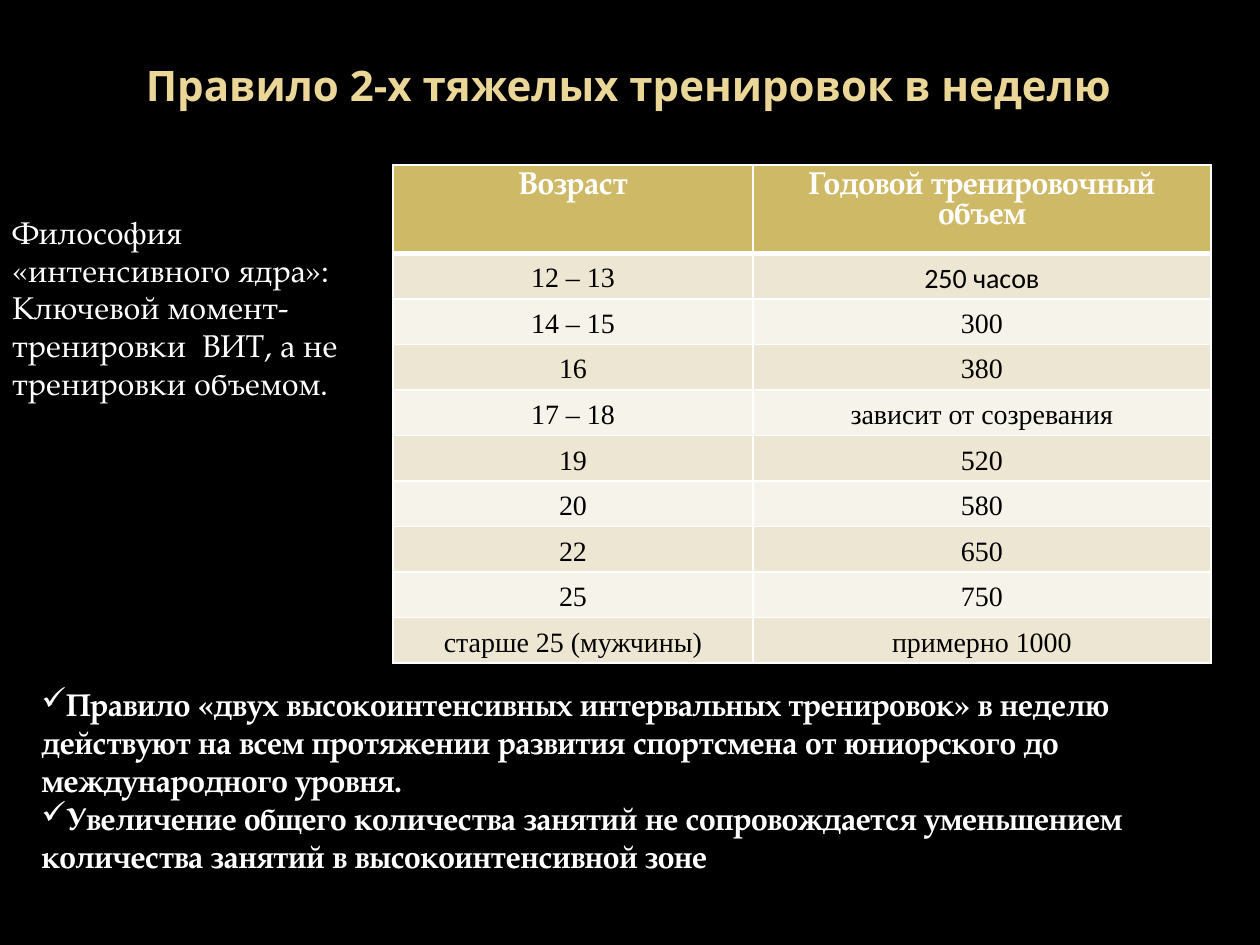
from dataclasses import dataclass

from lxml.etree import SubElement
from pptx import Presentation
from pptx.dml.color import RGBColor as RGB
from pptx.enum.text import MSO_ANCHOR as Anchor, PP_ALIGN as Align
from pptx.oxml.ns import qn
from pptx.util import Inches, Pt


@dataclass(frozen=True)
class Theme:
    background: RGB = RGB.from_string("000000")
    light: RGB = RGB.from_string("FFFFFF")
    dark: RGB = RGB.from_string("000000")
    title_start: RGB = RGB.from_string("EAD696")
    title_end: RGB = RGB.from_string("E7D081")
    header: RGB = RGB.from_string("CEB966")
    bands: tuple = (RGB.from_string("EDE6D3"), RGB.from_string("F6F3EA"))
    title_font: str = "Noto Sans"
    body_font: str = "TeX Gyre Pagella"
    cell_font: str = "Times New Roman"
    hours_font: str = "Calibri"
    title_size: int = 24
    body_size: int = 18
    cell_size: int = 16


THEME = Theme()
COLUMNS, ROWS = 100, 75
UNIT = Inches(10) // COLUMNS

TITLE = "Правило 2-х тяжелых тренировок в неделю "
PHILOSOPHY = [
    "Философия «интенсивного ядра»:",
    "Ключевой момент- тренировки  ВИТ, а не",
    "тренировки объемом.",
]
RULES = [
    "Правило «двух высокоинтенсивных интервальных тренировок» в неделю "
    "действуют на всем протяжении развития спортсмена от юниорского до "
    "международного уровня.",
    "Увеличение общего количества занятий не сопровождается уменьшением "
    "количества занятий в высокоинтенсивной зоне",
]
VOLUMES = [
    ("Возраст", "Годовой тренировочный объем"),
    ("12 – 13", "250 часов"),
    ("14 – 15", "300"),
    ("16", "380"),
    ("17 – 18", "зависит от созревания"),
    ("19", "520"),
    ("20", "580"),
    ("22", "650"),
    ("25", "750"),
    ("старше 25 (мужчины)", "примерно 1000"),
]


def grid_box(col, row, cols, rows):
    """Turn grid columns and rows into left, top, width and height."""
    return [round(n * UNIT) for n in (col, row, cols, rows)]


def style(p, font, size, color, bold=False):
    for r in p.runs:
        r.font.name = font
        r.font.size = Pt(size)
        r.font.bold = bold
        r.font.color.rgb = color


def add_text(slide, box, lines, bold=False):
    tf = slide.shapes.add_textbox(*box).text_frame
    tf.word_wrap = True
    tf.text = "\n".join(lines)
    for p in tf.paragraphs:
        style(p, THEME.body_font, THEME.body_size, THEME.light, bold)
    return tf


def add_title(slide, box):
    tf = add_text(slide, box, [TITLE])
    tf.vertical_anchor = Anchor.MIDDLE
    p = tf.paragraphs[0]
    p.alignment = Align.CENTER
    style(p, THEME.title_font, THEME.title_size, THEME.title_start, True)
    fill = p.runs[0].font.fill
    fill.gradient()
    fill.gradient_angle = 280
    stops = ((0.73, THEME.title_start), (1, THEME.title_end))
    for stop, (position, color) in zip(fill.gradient_stops, stops):
        stop.position = position
        stop.color.rgb = color


def add_rules(slide, box):
    tf = add_text(slide, box, RULES, bold=True)
    for p in tf.paragraphs:
        SubElement(p._p.get_or_add_pPr(), qn("a:buChar"), char="✓")


def set_borders(cell, widths):
    """Draw light borders; widths are points for left, right, top, bottom."""
    tcPr = cell._tc.get_or_add_tcPr()
    for i, (side, width) in enumerate(zip("LRTB", widths)):
        ln = SubElement(tcPr, qn(f"a:ln{side}"), w=str(Pt(width)))
        solid = SubElement(ln, qn("a:solidFill"))
        SubElement(solid, qn("a:srgbClr"), val=str(THEME.light))
        tcPr.insert(i, ln)


def fill_cell(cell, text, row):
    cell.text = text
    p = cell.text_frame.paragraphs[0]
    p.alignment = Align.CENTER
    cell.fill.solid()
    if row == 0:
        cell.fill.fore_color.rgb = THEME.header
        style(p, THEME.body_font, THEME.body_size, THEME.light, True)
    else:
        cell.fill.fore_color.rgb = THEME.bands[(row - 1) % 2]
        cell.vertical_anchor = Anchor.MIDDLE
        cell.margin_left = cell.margin_right = Inches(0.03)
        cell.margin_top = cell.margin_bottom = Inches(0.02)
        p.line_spacing = 1.15
        font = THEME.hours_font if "часов" in text else THEME.cell_font
        style(p, font, THEME.cell_size, THEME.dark)
    set_borders(cell, (1, 1, 3 if row == 1 else 1, 3 if row == 0 else 1))


def add_volumes(slide, box):
    width, height = box[2:]
    table = slide.shapes.add_table(len(VOLUMES), 2, *box).table
    for column, share in zip(table.columns, (0.44, 0.56)):
        column.width = round(width * share)
    header_height = round(height * 0.15)
    row_height = (height - header_height) // (len(VOLUMES) - 1)
    for i, values in enumerate(VOLUMES):
        table.rows[i].height = row_height if i else header_height
        for j, text in enumerate(values):
            fill_cell(table.cell(i, j), text, i)


def main():
    prs = Presentation()
    prs.slide_width, prs.slide_height = COLUMNS * UNIT, ROWS * UNIT
    s = prs.slides.add_slide(prs.slide_layouts[6])
    s.background.fill.solid()
    s.background.fill.fore_color.rgb = THEME.background
    add_title(s, grid_box(2.8, 2.1, 95, 9.2))
    add_volumes(s, grid_box(31.2, 13.1, 64.9, 38.3))
    add_rules(s, grid_box(2.3, 53.9, 96.1, 16.2))
    add_text(s, grid_box(0, 16.4, 31.2, 16.2), PHILOSOPHY)
    prs.save("out.pptx")


if __name__ == "__main__":
    main()
